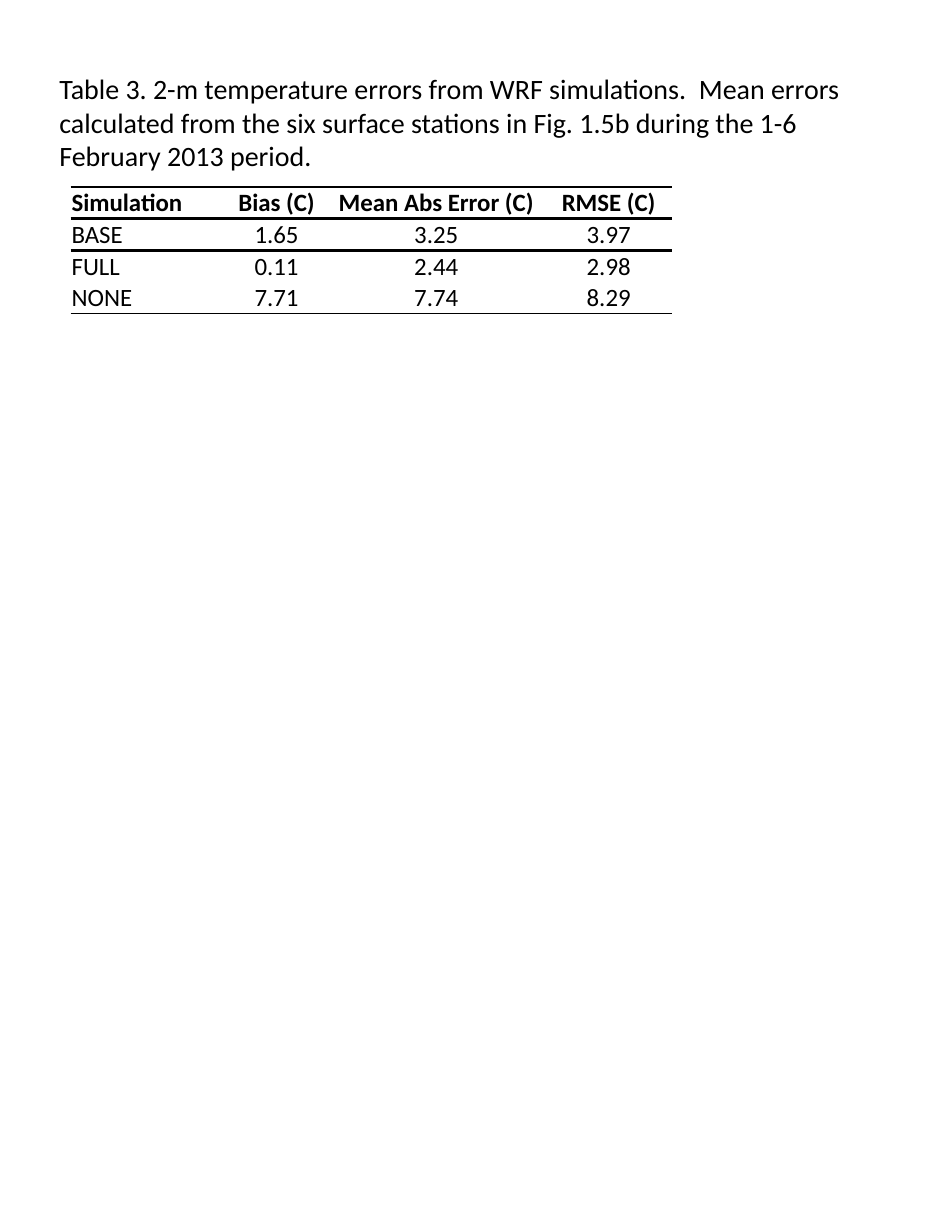
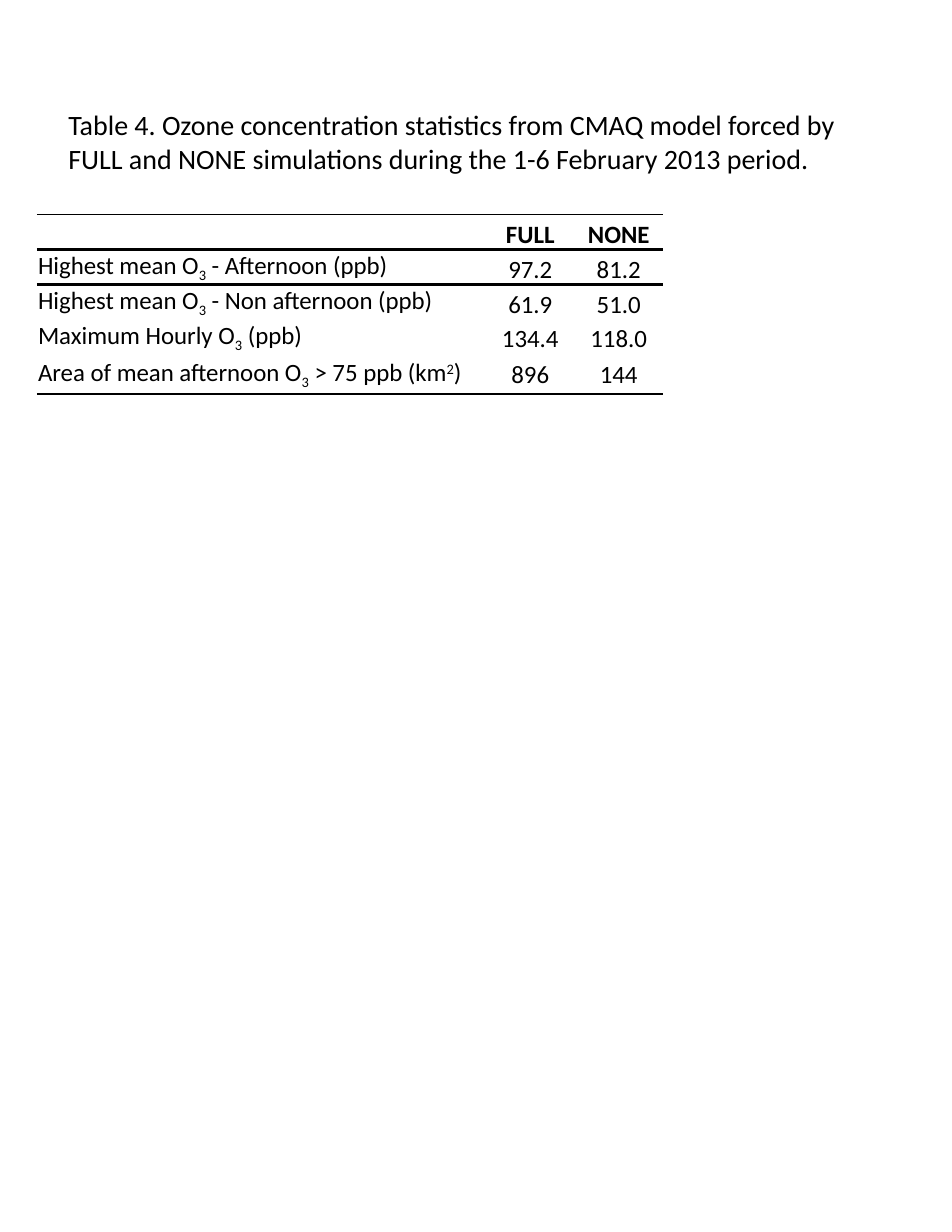
from dataclasses import dataclass

from lxml.etree import SubElement
from pptx import Presentation
from pptx.dml.color import RGBColor
from pptx.enum.text import MSO_ANCHOR as ANCHOR, MSO_AUTO_SIZE as AUTO, PP_ALIGN as ALIGN
from pptx.oxml.ns import qn
from pptx.util import Inches, Pt


@dataclass(frozen=True)
class Theme:
    """Colours, type sizes and rule weights shared by the slides."""
    ink: str = "000000"
    font: str = "Calibri"
    caption: int = 18
    body: int = 16
    thin: float = 1
    thick: float = 2.25


THEME = Theme()
COLS, ROWS = 85, 110
WIDTH, HEIGHT = Inches(8.5), Inches(11)
PLAIN_STYLE = "{2D5ABB26-0587-4C30-8999-92F81FD0307C}"
SUB3 = ("3", -25)
SQUARED = ("2", 30)

ERRORS = [
    ["Simulation", "Bias (C)", "Mean Abs Error (C)", "RMSE (C)"],
    ["BASE", "1.65", "3.25", "3.97"],
    ["FULL", "0.11", "2.44", "2.98"],
    ["NONE", "7.71", "7.74", "8.29"],
]
OZONE = [
    ["", "FULL", "NONE"],
    [["Highest mean O", SUB3, " - Afternoon (ppb)"], "97.2", "81.2"],
    [["Highest mean O", SUB3, " - Non afternoon (ppb)"], "61.9", "51.0"],
    [["Maximum Hourly O", SUB3, " (ppb)"], "134.4", "118.0"],
    [["Area of mean afternoon O", SUB3, " > 75 ppb (km", SQUARED, ")"], "896", "144"],
]


def across(n):
    """Length of n grid columns."""
    return int(WIDTH * n / COLS)


def down(n):
    """Length of n grid rows."""
    return int(HEIGHT * n / ROWS)


def add_run(p, text, size, bold=False, base=0):
    """Add one run, raised or lowered by base per cent."""
    r = p.add_run()
    r.text = text
    r.font.name, r.font.size, r.font.bold = THEME.font, Pt(size), bold
    r.font.color.rgb = RGBColor.from_string(THEME.ink)
    if base:
        r._r.get_or_add_rPr().set("baseline", str(base * 1000))


def add_caption(s, box, text):
    """Place the title placeholder in the box as a table caption."""
    sp = s.shapes.title
    left, top, width, height = box
    sp.left, sp.top = across(left), down(top)
    sp.width, sp.height = across(width), down(height)
    tf = sp.text_frame
    tf.word_wrap, tf.auto_size = True, AUTO.NONE
    tf.vertical_anchor = ANCHOR.TOP
    tf.margin_left = tf.margin_right = Inches(0.11)
    tf.margin_top = tf.margin_bottom = Inches(0.06)
    p = tf.paragraphs[0]
    p.alignment = ALIGN.LEFT
    add_run(p, text, THEME.caption)


def set_borders(cell, top, bottom):
    """Rule a cell above and below, with weight 0 meaning no line."""
    tcPr = cell._tc.get_or_add_tcPr()
    for side, weight in (("L", 0), ("R", 0), ("T", top), ("B", bottom)):
        ln = SubElement(tcPr, qn(f"a:ln{side}"), w=str(Pt(weight)))
        if weight:
            fill = SubElement(ln, qn("a:solidFill"))
            SubElement(fill, qn("a:srgbClr"), val=THEME.ink)
        else:
            SubElement(ln, qn("a:noFill"))


def fill_cell(cell, content, bold, align, anchor):
    """Write a string or a list of runs into a cell."""
    cell.fill.background()
    cell.vertical_anchor = anchor
    cell.margin_left = cell.margin_right = cell.margin_top = Inches(0.01)
    cell.margin_bottom = 0
    p = cell.text_frame.paragraphs[0]
    p.alignment = align
    for part in [content] if isinstance(content, str) else content:
        text, base = (part, 0) if isinstance(part, str) else part
        if text:
            add_run(p, text, THEME.body, bold, base)


def add_ruled_table(s, origin, widths, heights, rows, last_anchor):
    """Add a table ruled at its ends and around its first data row."""
    left, top = origin
    table = s.shapes.add_table(len(rows), len(widths), across(left), down(top),
                               across(sum(widths)), down(sum(heights))).table
    table.horz_banding = False
    table._tbl.tblPr.find(qn("a:tableStyleId")).text = PLAIN_STYLE
    for column, width in zip(table.columns, widths):
        column.width = across(width)
    last = len(rows) - 1
    rules = [THEME.thin, THEME.thick, THEME.thick] + [0] * (last - 2) + [THEME.thin]
    for i, (row, height) in enumerate(zip(rows, heights)):
        table.rows[i].height = down(height)
        for j, content in enumerate(row):
            cell = table.cell(i, j)
            set_borders(cell, rules[i], rules[i + 1])
            fill_cell(cell, content, i == 0, ALIGN.CENTER if j else ALIGN.LEFT,
                      last_anchor if i == last else ANCHOR.BOTTOM)


def add_table_slide(prs, caption_box, caption, origin, widths, heights, rows,
                    last_anchor=ANCHOR.BOTTOM):
    """Add a slide with a caption above a ruled table."""
    s = prs.slides.add_slide(prs.slide_layouts[5])
    add_caption(s, caption_box, caption)
    add_ruled_table(s, origin, widths, heights, rows, last_anchor)


def main():
    """Build both table slides and save them."""
    prs = Presentation()
    prs.slide_width, prs.slide_height = WIDTH, HEIGHT
    add_table_slide(
        prs, (4.2, 5.8, 77.5, 10.2),
        "Table 3. 2-m temperature errors from WRF simulations.  Mean errors calculated "
        "from the six surface stations in Fig. 1.5b during the 1-6 February 2013 period.",
        (6.3, 16.7), [13.9, 9, 19.5, 11.3], [2.78] * 4, ERRORS)
    add_table_slide(
        prs, (5, 9, 75.8, 7.3),
        "Table 4. Ozone concentration statistics from CMAQ model forced by FULL and NONE "
        "simulations during the 1-6 February 2013 period.",
        (3.3, 19.15), [40.1, 7.9, 7.9], [3.1, 3.1, 2.9, 3.1, 3.5], OZONE, ANCHOR.MIDDLE)
    prs.save("out.pptx")


if __name__ == "__main__":
    main()
